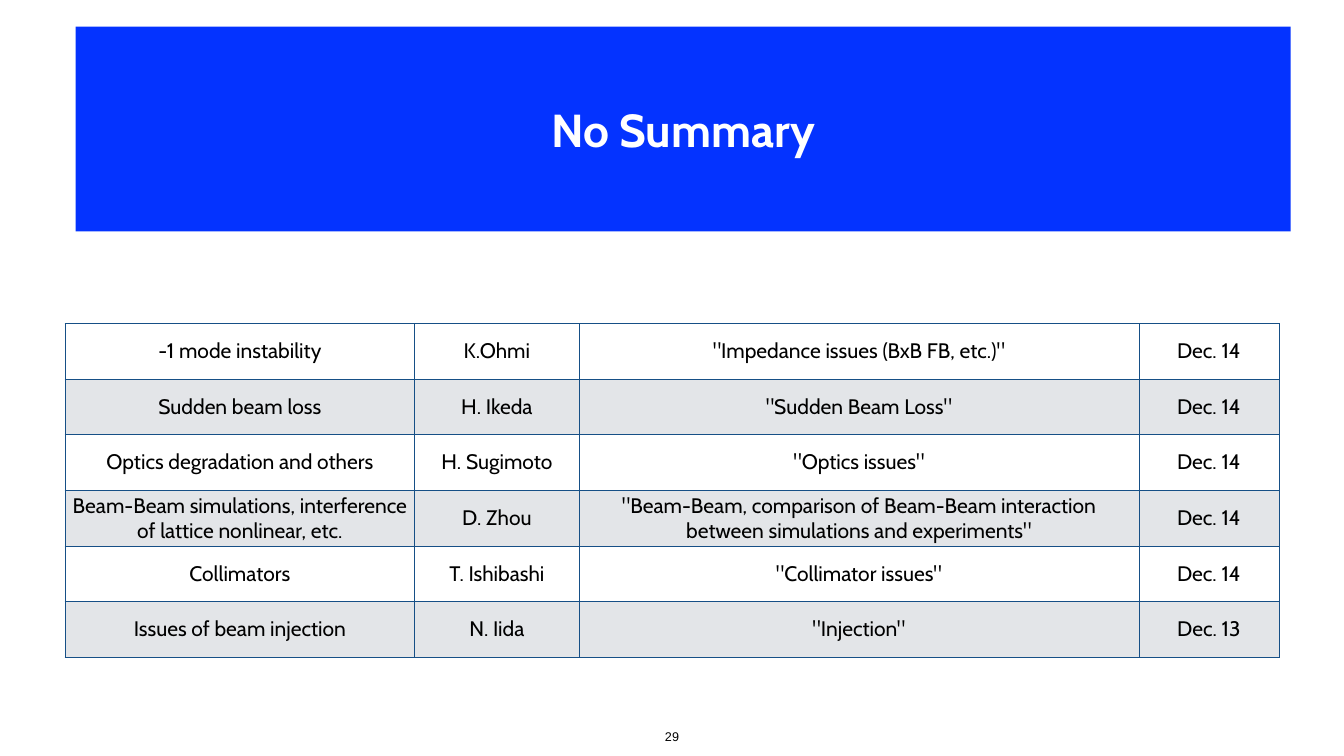
from lxml.etree import SubElement
from pptx import Presentation
from pptx.dml.color import RGBColor
from pptx.enum.text import MSO_ANCHOR, MSO_AUTO_SIZE, PP_ALIGN
from pptx.oxml.ns import qn
from pptx.util import Inches, Pt

COLORS = {
    "banner": "0433FF",
    "white": "FFFFFF",
    "band": "E3E5E8",
    "border": "164F86",
    "text": "000000",
}
COLUMN_WIDTHS = [6.94, 3.26, 11.11, 2.78]
ROW_HEIGHT = 1.1
TALKS = [
    ("-1 mode instability", "K.Ohmi", '"Impedance issues (BxB FB, etc.)"', "Dec. 14"),
    ("Sudden beam loss", "H. Ikeda", '"Sudden Beam Loss"', "Dec. 14"),
    ("Optics degradation and others", "H. Sugimoto", '"Optics issues"', "Dec. 14"),
    ("Beam-Beam simulations, interference of lattice nonlinear, etc.", "D. Zhou",
     '"Beam-Beam, comparison of Beam-Beam interaction between simulations and experiments"',
     "Dec. 14"),
    ("Collimators", "T. Ishibashi", '"Collimator issues"', "Dec. 14"),
    ("Issues of beam injection", "N. Iida", '"Injection"', "Dec. 13"),
]


def rgb(name):
    return RGBColor.from_string(COLORS[name])


def set_margins(holder, inches):
    """Give a text frame or table cell the same margin on all sides."""
    holder.margin_left = holder.margin_right = Inches(inches)
    holder.margin_top = holder.margin_bottom = Inches(inches)


class SlideBuilder:
    font = "Cabin"

    def __init__(self, page):
        self.page = page

    def set_text(self, frame, text, size, color="text", font=None, bold=False):
        frame.text = text
        para = frame.paragraphs[0]
        para.alignment = PP_ALIGN.CENTER
        para.font.name = font or self.font
        para.font.size = Pt(size)
        para.font.bold = bold
        para.font.color.rgb = rgb(color)

    def title(self, text, left, top, width, height):
        banner = self.page.shapes.title
        banner.left, banner.top = Inches(left), Inches(top)
        banner.width, banner.height = Inches(width), Inches(height)
        banner.fill.solid()
        banner.fill.fore_color.rgb = rgb("banner")
        frame = banner.text_frame
        frame.auto_size = MSO_AUTO_SIZE.NONE
        frame.vertical_anchor = MSO_ANCHOR.MIDDLE
        set_margins(frame, 0.29)
        self.set_text(frame, text, 66, "white", bold=True)

    def page_number(self, text, left, top, width, height):
        box = self.page.shapes.add_textbox(
            Inches(left), Inches(top), Inches(width), Inches(height))
        frame = box.text_frame
        frame.word_wrap = False
        frame.auto_size = MSO_AUTO_SIZE.SHAPE_TO_FIT_TEXT
        set_margins(frame, 0.08)
        self.set_text(frame, text, 18, font="Arial")

    def table(self, rows, left, top, widths, row_height):
        table = self.page.shapes.add_table(
            len(rows), len(widths), Inches(left), Inches(top),
            Inches(sum(widths)), Inches(row_height * len(rows))).table
        table.first_row = table.horz_banding = False
        for column, width in zip(table.columns, widths):
            column.width = Inches(width)
        for row_index, texts in enumerate(rows):
            table.rows[row_index].height = Inches(row_height)
            fill = "band" if row_index % 2 else "white"
            for column_index, text in enumerate(texts):
                self.cell(table.cell(row_index, column_index), text, fill)

    def cell(self, cell, text, fill):
        cell.vertical_anchor = MSO_ANCHOR.MIDDLE
        set_margins(cell, 0.06)
        self.set_text(cell.text_frame, text, 30)
        self.borders(cell)
        cell.fill.solid()
        cell.fill.fore_color.rgb = rgb(fill)

    def borders(self, cell):
        """Draw all four cell edges; must run before the cell is filled."""
        properties = cell._tc.get_or_add_tcPr()
        for edge in ("a:lnL", "a:lnR", "a:lnT", "a:lnB"):
            line = SubElement(properties, qn(edge), w=str(Pt(1)))
            solid = SubElement(line, qn("a:solidFill"))
            SubElement(solid, qn("a:srgbClr"), val=COLORS["border"])


def main():
    deck = Presentation()
    deck.slide_width, deck.slide_height = Inches(26.67), Inches(15)
    builder = SlideBuilder(deck.slides.add_slide(deck.slide_layouts[5]))
    builder.title("No Summary", 1.5, 0.53, 24.11, 4.06)
    builder.page_number("29", 13.11, 14.39, 0.45, 0.46)
    builder.table(TALKS, 1.29, 6.42, COLUMN_WIDTHS, ROW_HEIGHT)
    deck.save("out.pptx")


if __name__ == "__main__":
    main()
